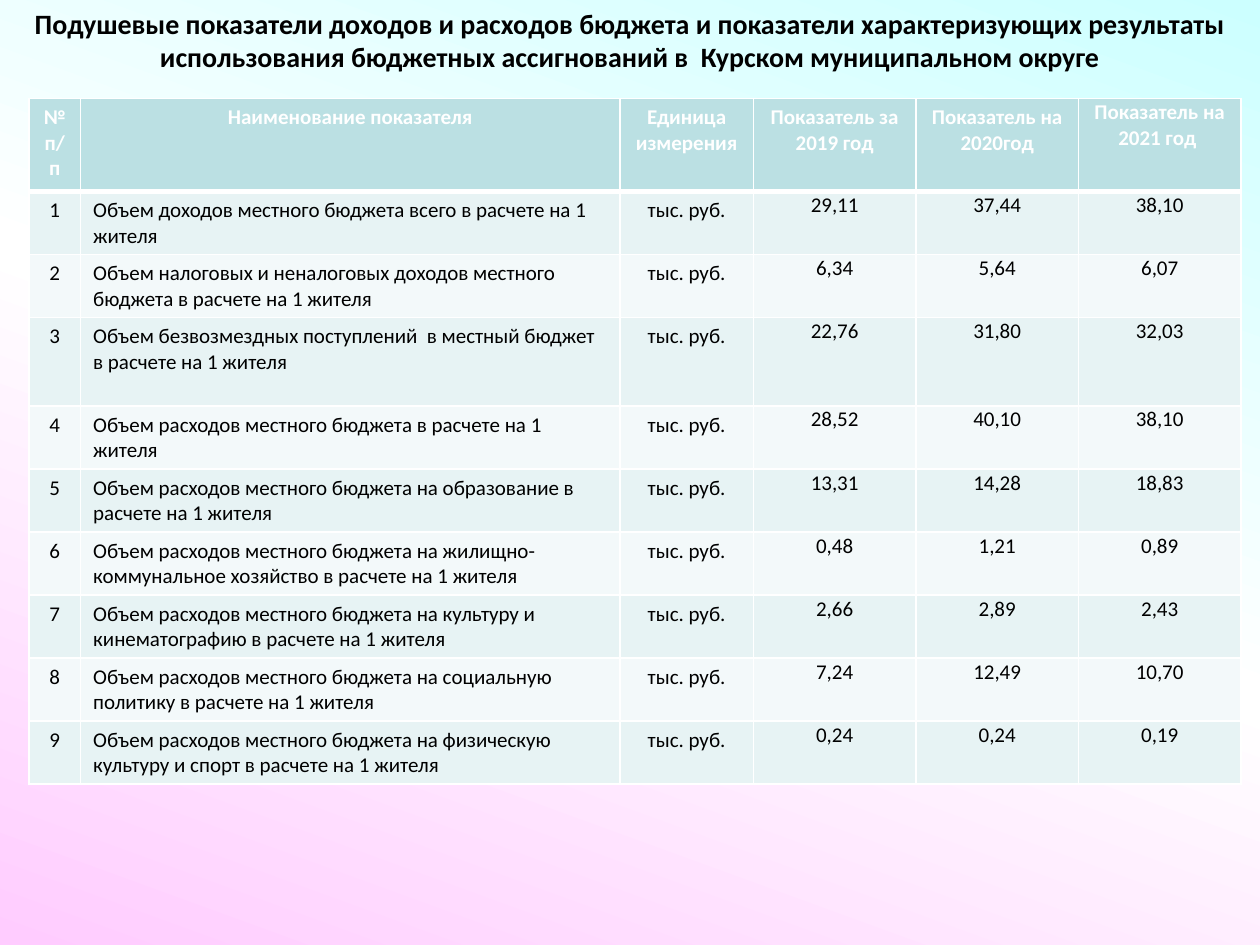
from copy import deepcopy
from dataclasses import dataclass

from lxml import etree
from pptx import Presentation
from pptx import util as u
from pptx.dml.color import RGBColor
from pptx.enum import text
from pptx.oxml.ns import qn

FONT = "Calibri"
COLORS = {
    "cyan": "CCFFFF", "white": "FFFFFF", "pink": "FFCCFF", "black": "000000",
    "header": "BBE0E3", "odd": "E7F3F4", "even": "F3F9FA",
}
TITLE = ("Подушевые показатели доходов и расходов бюджета и показатели "
         "характеризующих результаты использования бюджетных ассигнований "
         "в  Курском муниципальном округе")
HEADERS = ["№ п/п", "Наименование показателя", "Единица измерения",
           "Показатель за 2019 год", "Показатель на 2020год", "Показатель на 2021 год "]
UNIT = "тыс. руб."
COL_WIDTHS = [0.41, 4.28, 1.06, 1.29, 1.29, 1.29]
HEADER_HEIGHT = 0.74
NAME_COL, FIRST_YEAR_COL, LAST_COL = 1, 3, 5


@dataclass
class Indicator:
    name: str
    values: tuple[str, str, str]
    height: float = 0.5


INDICATORS = [
    Indicator("Объем доходов местного бюджета всего в расчете на 1 жителя",
              ("29,11", "37,44", "38,10")),
    Indicator("Объем налоговых и неналоговых доходов местного бюджета в расчете на 1 жителя",
              ("6,34", "5,64", "6,07")),
    Indicator("Объем безвозмездных поступлений  в местный бюджет в расчете на 1 жителя",
              ("22,76", "31,80", "32,03"), 0.7),
    Indicator("Объем расходов местного бюджета в расчете на 1 жителя",
              ("28,52", "40,10", "38,10")),
    Indicator("Объем расходов местного бюджета на образование в расчете на 1 жителя",
              ("13,31", "14,28", "18,83")),
    Indicator("Объем расходов местного бюджета на жилищно-коммунальное хозяйство "
              "в расчете на 1 жителя", ("0,48", "1,21", "0,89")),
    Indicator("Объем расходов местного бюджета на культуру и кинематографию "
              "в расчете на 1 жителя", ("2,66", "2,89", "2,43")),
    Indicator("Объем расходов местного бюджета на социальную политику в расчете на 1 жителя",
              ("7,24", "12,49", "10,70")),
    Indicator("Объем расходов местного бюджета на физическую культуру и спорт "
              "в расчете на 1 жителя", ("0,24", "0,24", "0,19")),
]


def rgb(name: str) -> RGBColor:
    return RGBColor.from_string(COLORS[name])


def write(tf, content: str, size: int, color: str, bold: bool, centred: bool = True) -> None:
    tf.text = content
    p = tf.paragraphs[0]
    p.alignment = text.PP_ALIGN.CENTER if centred else text.PP_ALIGN.LEFT
    font = p.runs[0].font
    font.name, font.size, font.bold = FONT, u.Pt(size), bold
    font.color.rgb = rgb(color)


def paint_background(s) -> None:
    fill = s.background.fill
    fill.gradient()
    fill.gradient_angle = 250
    # The default gradient has two stops; a third goes between them
    stops = s._element.find(".//" + qn("a:gsLst"))
    stops.insert(1, deepcopy(stops[0]))
    for i, (stop, name) in enumerate(zip(fill.gradient_stops, ("cyan", "white", "pink"))):
        stop.color.rgb = rgb(name)
        stop.position = i / 2


def set_borders(cell, top: int, bottom: int) -> None:
    tc_pr = cell._tc.get_or_add_tcPr()
    sides = {"lnL": 1, "lnR": 1, "lnT": top, "lnB": bottom}
    for i, (side, width) in enumerate(sides.items()):
        ln = etree.Element(qn("a:" + side), w=str(u.Pt(width)))
        solid = etree.SubElement(ln, qn("a:solidFill"))
        etree.SubElement(solid, qn("a:srgbClr"), val=COLORS["white"])
        tc_pr.insert(i, ln)


def draw_cell(cell, content: str, row: int, col: int) -> None:
    header = row == 0
    if col == LAST_COL or (col >= FIRST_YEAR_COL and not header):
        cell.margin_left = cell.margin_right = cell.margin_top = u.Inches(0.01)
        cell.margin_bottom = 0
    write(cell.text_frame, content, 12, "white" if header else "black", header,
          centred=header or col != NAME_COL)
    cell.fill.solid()
    cell.fill.fore_color.rgb = rgb("header" if header else "odd" if row % 2 else "even")
    set_borders(cell, top=3 if row == 1 else 1, bottom=3 if header else 1)


def draw_table(s) -> None:
    rows = [HEADERS] + [[str(n), item.name, UNIT, *item.values]
                        for n, item in enumerate(INDICATORS, 1)]
    heights = [HEADER_HEIGHT] + [item.height for item in INDICATORS]
    table = s.shapes.add_table(len(rows), len(HEADERS), u.Inches(0.23), u.Inches(0.78),
                               u.Inches(sum(COL_WIDTHS)), u.Inches(sum(heights))).table
    for column, width in zip(table.columns, COL_WIDTHS):
        column.width = u.Inches(width)
    for i, (values, height) in enumerate(zip(rows, heights)):
        table.rows[i].height = u.Inches(height)
        for j, value in enumerate(values):
            draw_cell(table.cell(i, j), value, i, j)


def main() -> None:
    prs = Presentation()
    prs.slide_width, prs.slide_height = u.Inches(10), u.Inches(7.5)
    s = prs.slides.add_slide(prs.slide_layouts[6])
    paint_background(s)

    # Title
    tf = s.shapes.add_textbox(0, 0, prs.slide_width, u.Inches(0.64)).text_frame
    tf.word_wrap = True
    tf.auto_size = text.MSO_AUTO_SIZE.SHAPE_TO_FIT_TEXT
    write(tf, TITLE, 16, "black", bold=True)

    # Per-capita indicators
    draw_table(s)
    prs.save("out.pptx")


if __name__ == "__main__":
    main()
